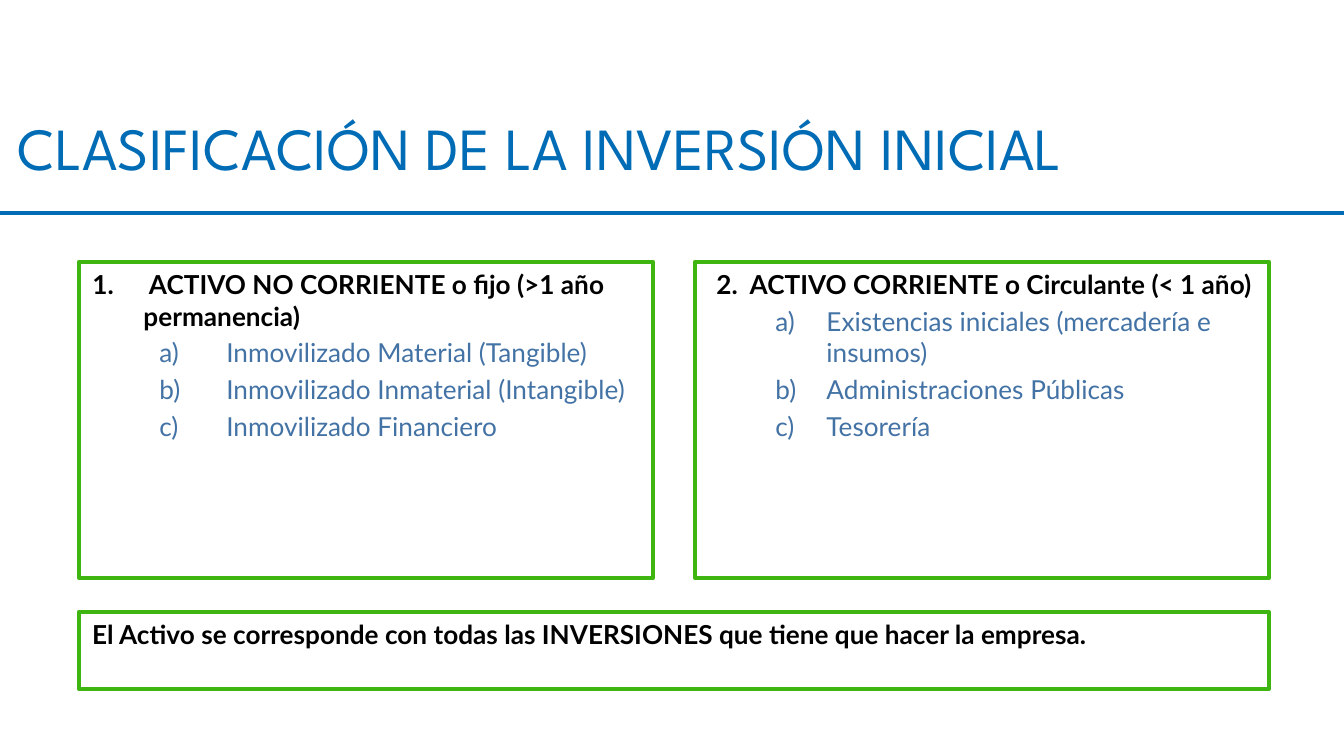
from lxml import etree
from pptx import Presentation
from pptx import util as u
from pptx.dml.color import RGBColor
from pptx.enum import shapes, text
from pptx.oxml.ns import qn

COLORS = {"blue": "006CB5", "green": "3FB512", "item": "4372A5", "black": "000000"}
TITLE = "CLASIFICACIÓN DE LA INVERSIÓN INICIAL"
ASSETS = [
    {
        "heading": " ACTIVO NO CORRIENTE o fijo (>1 año permanencia)",
        "numbering": "arabicPeriod",
        "heading_indent": (51, -51),
        "item_indent": (134, -67),
        "items": [
            "Inmovilizado Material (Tangible)",
            "Inmovilizado Inmaterial (Intangible)",
            "Inmovilizado Financiero",
        ],
    },
    {
        "heading": "2.  ACTIVO CORRIENTE o Circulante (< 1 año)",
        "numbering": None,
        "heading_indent": (8, 0),
        "item_indent": (118, -51),
        "items": [
            "Existencias iniciales (mercadería e insumos)",
            "Administraciones Públicas",
            "Tesorería",
        ],
    },
]
SUMMARY = "El Activo se corresponde con todas las INVERSIONES que tiene que hacer la empresa."

WIDTH, HEIGHT = 1344, 743
LEFT, PANEL_TOP, PANEL_W, PANEL_H, GAP = 79, 262, 574, 316, 42
SUMMARY_TOP, SUMMARY_H = 612, 77
RULE_Y = 213


def px(n):
    return u.Emu(round(n * 914400 / 134.4))


def rgb(name):
    return RGBColor.from_string(COLORS[name])


def place(shape, x, y, w, h):
    shape.left, shape.top, shape.width, shape.height = map(px, (x, y, w, h))
    frame = shape.text_frame
    frame.word_wrap = True
    frame.auto_size = text.MSO_AUTO_SIZE.NONE
    frame.vertical_anchor = text.MSO_ANCHOR.TOP
    return frame


def outline(shape):
    shape.fill.background()
    shape.line.color.rgb = rgb("green")
    shape.line.width = u.Pt(2.25)


def write(paragraph, words, color, size=14, font="Lato", bold=False):
    paragraph.text = words
    paragraph.alignment = text.PP_ALIGN.LEFT
    for run in paragraph.runs:
        run.font.name, run.font.size, run.font.bold = font, u.Pt(size), bold
        run.font.color.rgb = rgb(color)


def number(paragraph, indents, style):
    paragraph.space_before = u.Pt(2.8)
    props = paragraph._p.get_or_add_pPr()
    for key, value in zip(("marL", "indent"), indents):
        props.set(key, str(px(value)))
    if style:
        etree.SubElement(props, qn("a:buFont"), typeface="Lato")
        etree.SubElement(props, qn("a:buAutoNum"), type=style)
    else:
        etree.SubElement(props, qn("a:buNone"))


prs = Presentation()
prs.slide_width, prs.slide_height = px(WIDTH), px(HEIGHT)
slide = prs.slides.add_slide(prs.slide_layouts[3])
title, *panels = slide.placeholders

write(place(title, 4, 104, WIDTH - 4, 159).paragraphs[0], TITLE, "blue", 32, "League Spartan")

for i, (panel, asset) in enumerate(zip(panels, ASSETS)):
    frame = place(panel, LEFT + i * (PANEL_W + GAP), PANEL_TOP, PANEL_W, PANEL_H)
    outline(panel)
    heading = frame.paragraphs[0]
    write(heading, asset["heading"], "black", bold=True)
    number(heading, asset["heading_indent"], asset["numbering"])
    for words in asset["items"]:
        item = frame.add_paragraph()
        item.level = 1
        write(item, words, "item")
        number(item, asset["item_indent"], "alphaLcParenR")

summary = slide.shapes.add_shape(shapes.MSO_SHAPE.RECTANGLE, 0, 0, 0, 0)
summary.shadow.inherit = False
outline(summary)
summary_frame = place(summary, LEFT, SUMMARY_TOP, 2 * PANEL_W + GAP, SUMMARY_H)
write(summary_frame.paragraphs[0], SUMMARY, "black", bold=True)

rule = slide.shapes.add_connector(
    shapes.MSO_CONNECTOR.STRAIGHT, 0, px(RULE_Y), px(WIDTH), px(RULE_Y)
)
rule.line.color.rgb = rgb("blue")
rule.line.width = u.Pt(2)
etree.SubElement(rule._element.spPr, qn("a:effectLst"))

prs.save("out.pptx")
